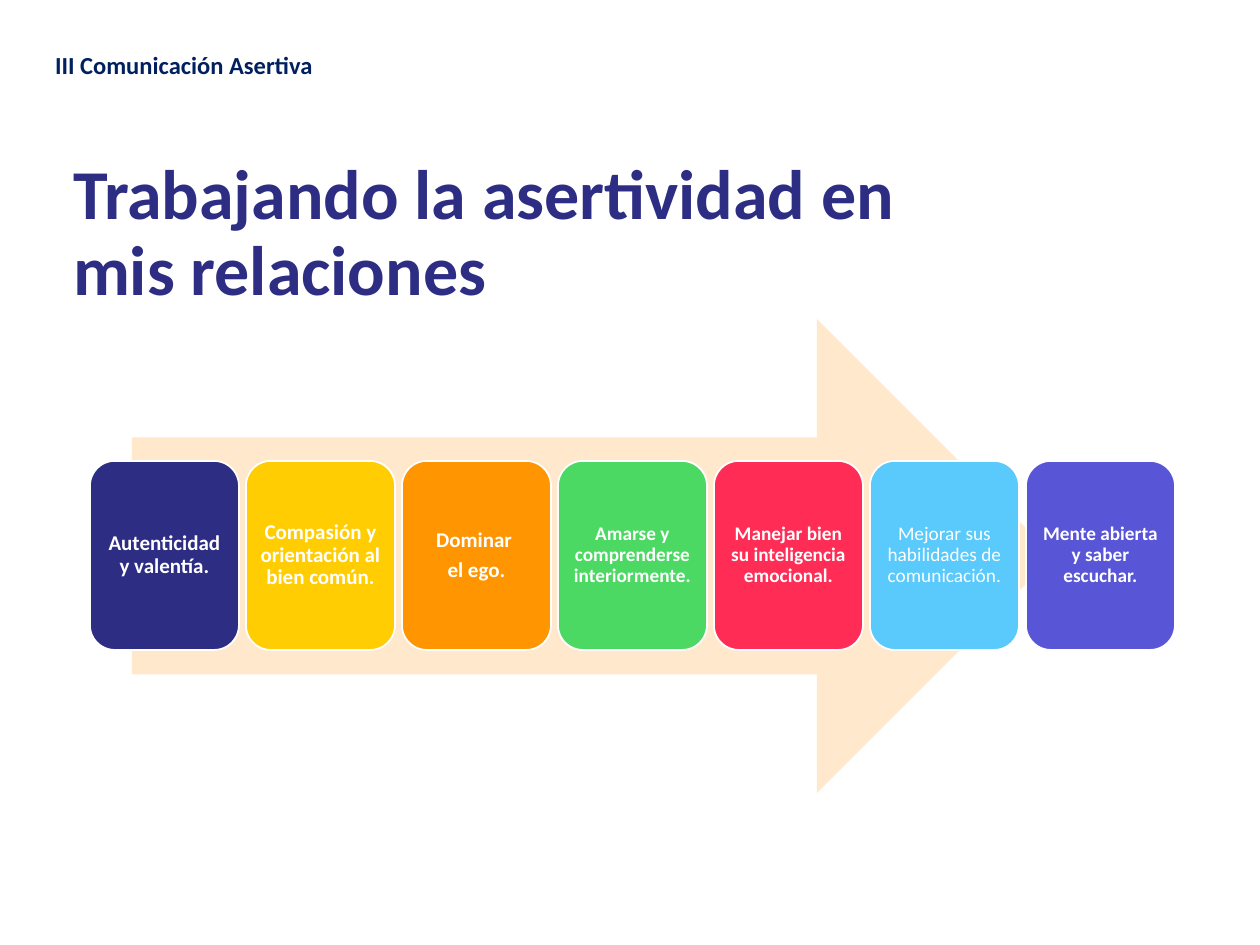
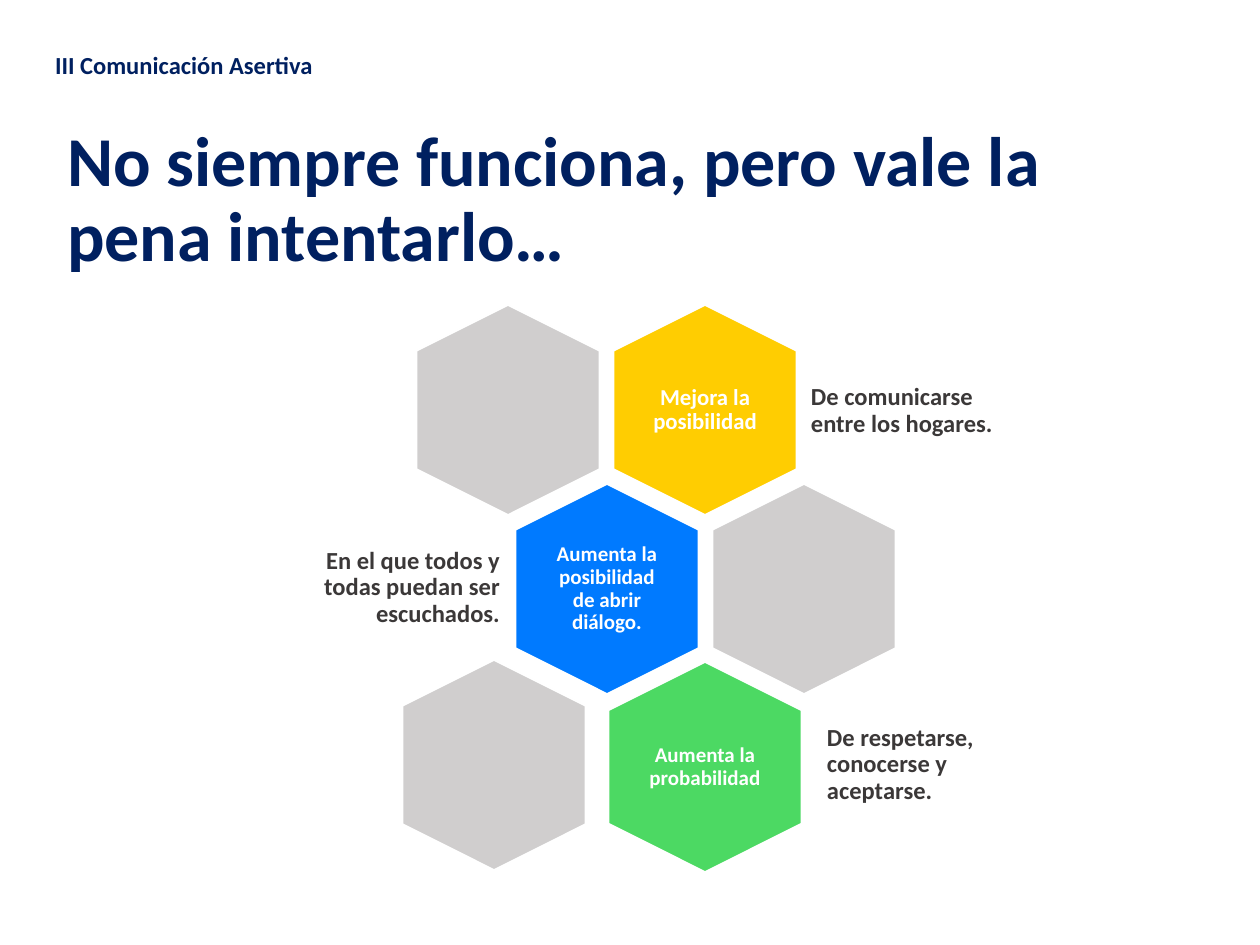
from pptx import Presentation
from pptx import util as u
from pptx.dml.color import RGBColor
from pptx.enum import shapes, text

SCALE = 914400 / 126
FONT = "Calibri"
WHITE = "FFFFFF"
NAVY = "002060"
INDIGO = "2D2E83"
YELLOW = "FFCD01"
GREEN = "4CD963"
GREY = "D0CECE"
CHARCOAL = "3B3838"
PEACH = "FFE8CC"

CARDS = [
    (INDIGO, "Autenticidad y valentía.", 12, True),
    (YELLOW, "Compasión y orientación al bien común.", 12, True),
    ("FF9500", "Dominar \nel ego.", 12, True),
    (GREEN, "Amarse y comprenderse interiormente.", 11, True),
    ("FF2C55", "Manejar bien su inteligencia emocional.", 11, True),
    ("5AC9FB", "Mejorar sus habilidades de comunicación.", 11, False),
    ("5855D7", "Mente abierta y saber escuchar.", 11, True),
]

HEXAGONS = [
    (705, 410, 183, YELLOW, "Mejora la posibilidad", 13),
    (508, 410, 183, GREY, "", 0),
    (607, 589, 183, "007AFF", "Aumenta la posibilidad de abrir diálogo.", 12),
    (804, 589, 183, GREY, "", 0),
    (705, 767, 193, GREEN, "Aumenta la probabilidad", 12),
    (494, 765, 183, GREY, "", 0),
]

CAPTIONS = [
    (803, 348, 234, "De comunicarse entre los hogares.", "LEFT"),
    (281, 525, 227, "En el que todos y todas puedan ser escuchados.", "RIGHT"),
    (819, 702, 234, "De respetarse, conocerse y aceptarse.", "LEFT"),
]


def px(length):
    return u.Emu(round(length * SCALE))


def color(value):
    return RGBColor.from_string(value)


def write(shape, content, size=12, fill=WHITE, bold=True, align="CENTER",
          anchor="MIDDLE", inset=(6, 6), line_spacing=0.9, after=0.35):
    frame = shape.text_frame
    frame.word_wrap = True
    frame.auto_size = text.MSO_AUTO_SIZE.NONE
    frame.vertical_anchor = text.MSO_ANCHOR[anchor]
    frame.margin_left = frame.margin_right = px(inset[0])
    frame.margin_top = frame.margin_bottom = px(inset[1])
    frame.text = content
    for paragraph in frame.paragraphs:
        paragraph.alignment = text.PP_ALIGN[align]
        paragraph.line_spacing = line_spacing
        paragraph.space_after = u.Pt(round(after * size, 1))
        for run in paragraph.runs:
            run.font.name = FONT
            run.font.size = u.Pt(size)
            run.font.bold = bold
            run.font.color.rgb = color(fill)


def add_label(slide, left, top, width, height, content, **style):
    box = slide.shapes.add_textbox(px(left), px(top), px(width), px(height))
    write(box, content, **style)


def add_figure(slide, kind, left, top, width, height, fill, outline=WHITE):
    shape = slide.shapes.add_shape(kind, px(left), px(top), px(width), px(height))
    shape.shadow.inherit = False
    shape.fill.solid()
    shape.fill.fore_color.rgb = color(fill)
    if outline:
        shape.line.color.rgb = color(outline)
        shape.line.width = u.Pt(1)
    else:
        shape.line.fill.background()
    return shape


def add_titled_slide(presentation, title, left, top, width, height, fill):
    slide = presentation.slides.add_slide(presentation.slide_layouts[5])
    shape = slide.shapes.title
    shape.left, shape.top = px(left), px(top)
    shape.width, shape.height = px(width), px(height)
    write(shape, title, size=40, fill=fill, align="LEFT", inset=(13, 6), after=0)
    add_label(slide, 42, 44, 622, 43, "III Comunicación Asertiva", size=14,
              fill=NAVY, align="LEFT", anchor="TOP", inset=(13, 6),
              line_spacing=1.0, after=0)
    return slide


def add_hexagon(slide, center_x, center_y, width, fill, label, size):
    height = 210
    hexagon = add_figure(slide, shapes.MSO_SHAPE.HEXAGON, center_x - height / 2,
                         center_y - width / 2, height, width, fill)
    hexagon.adjustments[0] = 0.25
    hexagon.rotation = 90
    if label:
        add_label(slide, center_x - 64, center_y - 72, 128, 144, label, size=size)


def add_arrow_slide(presentation):
    slide = add_titled_slide(presentation, "Trabajando la asertividad en mis relaciones",
                             60, 152, 895, 166, INDIGO)
    add_figure(slide, shapes.MSO_SHAPE.RIGHT_ARROW, 132, 319, 922, 474, PEACH, None)
    for index, (fill, label, size, bold) in enumerate(CARDS):
        card = add_figure(slide, shapes.MSO_SHAPE.ROUNDED_RECTANGLE,
                          90 + 156 * index, 461, 149, 189, fill)
        write(card, label, size=size, bold=bold)


def add_hexagon_slide(presentation):
    slide = add_titled_slide(presentation,
                             "No siempre funciona, pero vale la pena intentarlo…",
                             54, 110, 1086, 183, NAVY)
    for hexagon in HEXAGONS:
        add_hexagon(slide, *hexagon)
    for left, top, width, content, align in CAPTIONS:
        add_label(slide, left, top, width, 126, content, size=14, fill=CHARCOAL,
                  align=align, inset=(8, 8))


def main():
    presentation = Presentation()
    presentation.slide_width, presentation.slide_height = px(1260), px(945)
    add_arrow_slide(presentation)
    add_hexagon_slide(presentation)
    presentation.save("out.pptx")


if __name__ == "__main__":
    main()
